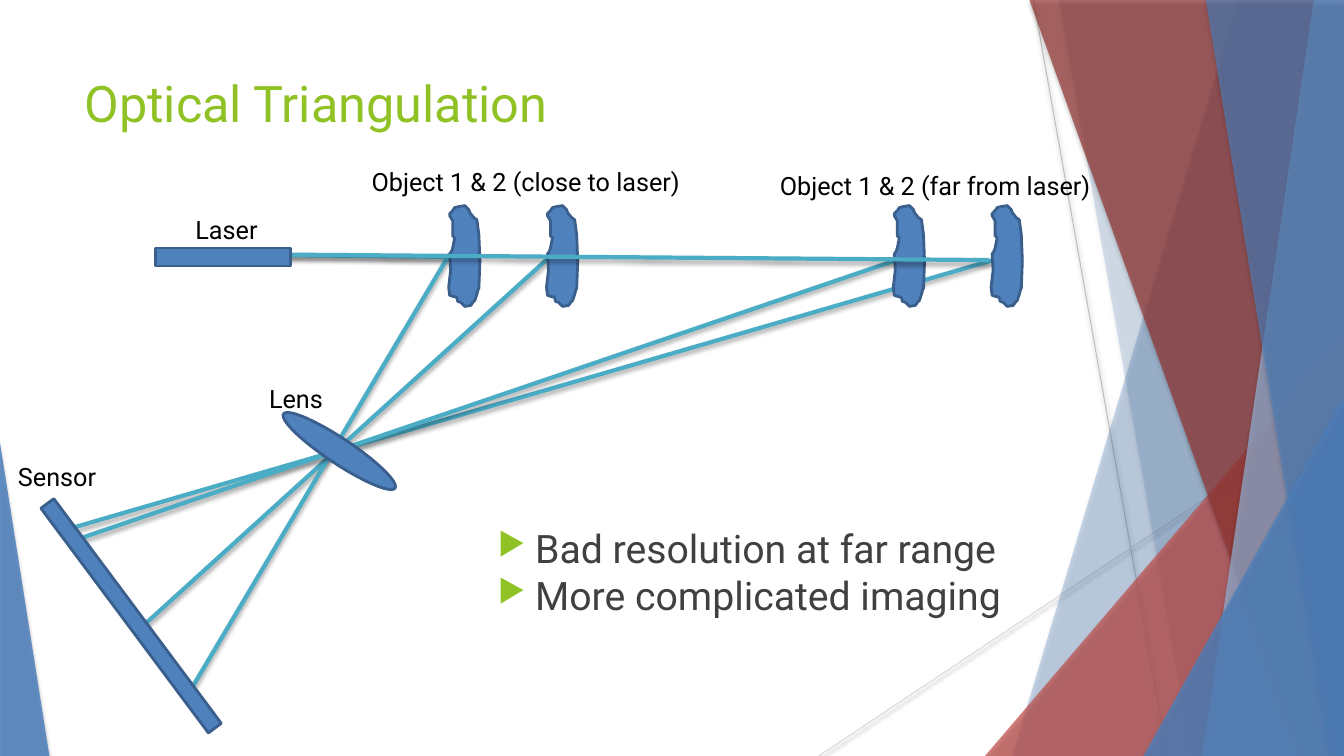
"""Build the optical triangulation slide."""

from dataclasses import dataclass
from functools import singledispatch

import lxml.etree
import pptx
import pptx.dml.color
import pptx.enum.shapes
import pptx.enum.text
import pptx.oxml.ns
import pptx.util

Inches = pptx.util.Inches
Pt = pptx.util.Pt
Kind = pptx.enum.shapes.MSO_SHAPE
Align = pptx.enum.text.PP_ALIGN
qn = pptx.oxml.ns.qn
WIDTH, HEIGHT = 13.33, 7.5


@dataclass(frozen=True)
class Theme:
    font: str = "Roboto"
    green: str = "90C226"
    black: str = "000000"
    gray: str = "404040"
    blue: str = "4F81BD"
    edge: str = "3A5F8C"
    pale: str = "95B3D7"
    red: str = "C0504D"
    wine: str = "953735"
    beam: str = "4BACC6"
    silver: str = "BFBFBF"
    mist: str = "D9D9D9"
    title: int = 36
    body: int = 28
    label: int = 18


THEME = Theme()


@dataclass(frozen=True)
class Line:
    start: tuple[float, float]
    end: tuple[float, float]
    color: str = THEME.beam
    weight: float = 3


@dataclass(frozen=True)
class Sheet:
    top: float
    foot: float
    color: str
    alpha: int


@dataclass(frozen=True)
class Wedge:
    box: tuple[float, float, float, float]
    peak: float
    color: str
    alpha: int


@dataclass(frozen=True)
class Part:
    kind: Kind
    box: tuple[float, float, float, float]
    turn: float = 0


@dataclass(frozen=True)
class Target:
    left: float
    top: float = 2.04


@dataclass(frozen=True)
class Label:
    lines: tuple[str, ...]
    box: tuple[float, float, float, float]
    size: int = THEME.label
    color: str = THEME.black
    align: Align = Align.LEFT
    bullet: str = ""


OUTLINE = (
    (0.04, 0.15), (0.04, 0.3), (0.06, 0.32), (0.04, 0.42), (0.03, 0.45),
    (0.01, 0.48), (0.02, 0.64), (0, 0.81), (0.01, 0.89), (0.04, 0.9),
    (0.08, 0.91), (0.09, 0.95), (0.12, 0.96), (0.16, 1), (0.22, 0.99),
    (0.24, 0.96), (0.26, 0.94), (0.28, 0.88), (0.29, 0.84), (0.3, 0.82),
    (0.31, 0.55), (0.3, 0.29), (0.28, 0.14), (0.25, 0.12), (0.21, 0.07),
    (0.2, 0.04), (0.18, 0.02), (0.16, 0), (0.1, 0.01), (0.06, 0.02),
    (0.04, 0.05), (0.01, 0.08), (0.01, 0.1),
)

SCENE = (
    Line((10.25, 0), (11.58, HEIGHT), THEME.silver, 0.75),
    Line((WIDTH, 4.03), (8.12, HEIGHT), THEME.mist, 0.75),
    Sheet(12.28, 10.04, THEME.blue, 30),
    Sheet(10.5, 11.82, THEME.blue, 20),
    Wedge((9.77, 3.33, 3.56, 4.17), 1, THEME.red, 72),
    Sheet(10.21, 12.91, THEME.wine, 70),
    Sheet(13.03, 11.92, THEME.pale, 70),
    Sheet(11.96, 13.18, THEME.blue, 65),
    Wedge((11.34, 3.93, 1.99, 3.57), 1, THEME.blue, 80),
    Wedge((0, 4.39, 0.49, 3.11), 0, THEME.blue, 85),
    Label(("Optical Triangulation",), (0.74, 0.67, 9.4, 1.44),
          THEME.title, THEME.green),
    Line((2.69, 2.53), (4.61, 2.55)),
    Line((1.44, 6.19), (5.44, 2.56)),
    Line((1.9, 6.83), (4.46, 2.52)),
    Label(("Laser",), (1.84, 2.08, 1.22, 0.4)),
    Line((0.74, 5.23), (9.99, 2.54)),
    Line((0.74, 5.36), (9.01, 2.54)),
    Part(Kind.RECTANGLE, (-0.09, 6.03, 2.78, 0.16), 53.3),
    Target(4.45),
    Target(5.42),
    Target(8.86),
    Target(9.83),
    Line((2.01, 2.52), (9.81, 2.58)),
    Part(Kind.RECTANGLE, (1.54, 2.46, 1.34, 0.18)),
    Part(Kind.OVAL, (2.7, 4.35, 1.33, 0.25), 33.6),
    Label(("Lens",), (2.57, 3.75, 1.22, 0.4)),
    Label(("Sensor",), (0.08, 4.53, 1.22, 0.4)),
    Label(("Object 1 & 2 (close to laser)",), (3.36, 1.6, 3.71, 0.4),
          align=Align.CENTER),
    Label(("Object 1 & 2 (far from laser)",), (7.42, 1.64, 3.71, 0.7),
          align=Align.CENTER),
    Label(("Bad resolution at far range", "More complicated imaging"),
          (4.83, 5.15, 6.19, 2.08), THEME.body, THEME.gray, bullet="▶"),
)


def rgb(color: str) -> pptx.dml.color.RGBColor:
    return pptx.dml.color.RGBColor.from_string(color)


def add(parent, tag: str, **attrs):
    return lxml.etree.SubElement(parent, qn(tag), attrs)


def shade(shape) -> None:
    glow = add(add(shape._element.spPr, "a:effectLst"), "a:outerShdw",
               blurRad=str(Pt(3)), dist=str(Pt(2)), dir="5400000", rotWithShape="0")
    add(add(glow, "a:srgbClr", val=THEME.black), "a:alpha", val="35000")


def tint(shape, color: str, alpha: int) -> None:
    shape.fill.solid()
    shape.fill.fore_color.rgb = rgb(color)
    tone = shape._element.spPr.find(qn("a:solidFill"))[0]
    add(tone, "a:alpha", val=str(alpha * 1000))
    shape.line.fill.background()
    shade(shape)


def ink(shape) -> None:
    shape.shadow.inherit = False
    shape.fill.solid()
    shape.fill.fore_color.rgb = rgb(THEME.blue)
    shape.line.color.rgb = rgb(THEME.edge)
    shape.line.width = Pt(2)


def trace(shapes, points: list[tuple[float, float]]):
    spots = [(Inches(x), Inches(y)) for x, y in points]
    form = shapes.build_freeform(*spots[0])
    form.add_line_segments(spots[1:], close=True)
    return form.convert_to_shape()


@singledispatch
def draw(item, shapes) -> None:
    raise TypeError(item)


@draw.register
def _(item: Line, shapes) -> None:
    ends = map(Inches, (*item.start, *item.end))
    line = shapes.add_connector(pptx.enum.shapes.MSO_CONNECTOR.STRAIGHT, *ends)
    line.line.color.rgb = rgb(item.color)
    line.line.width = Pt(item.weight)
    shade(line)


@draw.register
def _(item: Sheet, shapes) -> None:
    points = [(item.top, 0), (WIDTH, 0), (WIDTH, HEIGHT), (item.foot, HEIGHT)]
    tint(trace(shapes, points), item.color, item.alpha)


@draw.register
def _(item: Wedge, shapes) -> None:
    wedge = shapes.add_shape(Kind.ISOSCELES_TRIANGLE, *map(Inches, item.box))
    wedge.adjustments[0] = item.peak
    tint(wedge, item.color, item.alpha)


@draw.register
def _(item: Part, shapes) -> None:
    part = shapes.add_shape(item.kind, *map(Inches, item.box))
    part.rotation = item.turn
    ink(part)


@draw.register
def _(item: Target, shapes) -> None:
    ink(trace(shapes, [(item.left + x, item.top + y) for x, y in OUTLINE]))


@draw.register
def _(item: Label, shapes) -> None:
    frame = shapes.add_textbox(*map(Inches, item.box)).text_frame
    frame.word_wrap = True
    frame.text = "\n".join(item.lines)
    for para in frame.paragraphs:
        para.alignment = item.align
        if item.bullet:
            props = para._p.get_or_add_pPr()
            props.set("marL", str(Inches(0.38)))
            props.set("indent", str(Inches(-0.37)))
            add(add(props, "a:buClr"), "a:srgbClr", val=THEME.green)
            add(props, "a:buSzPct", val="80000")
            add(props, "a:buChar", char=item.bullet)
        para.font.name = THEME.font
        para.font.size = Pt(item.size)
        para.font.color.rgb = rgb(item.color)


def main() -> None:
    deck = pptx.Presentation()
    deck.slide_width, deck.slide_height = Inches(WIDTH), Inches(HEIGHT)
    slide = deck.slides.add_slide(deck.slide_layouts[6])
    for item in SCENE:
        draw(item, slide.shapes)
    deck.save("out.pptx")


if __name__ == "__main__":
    main()
